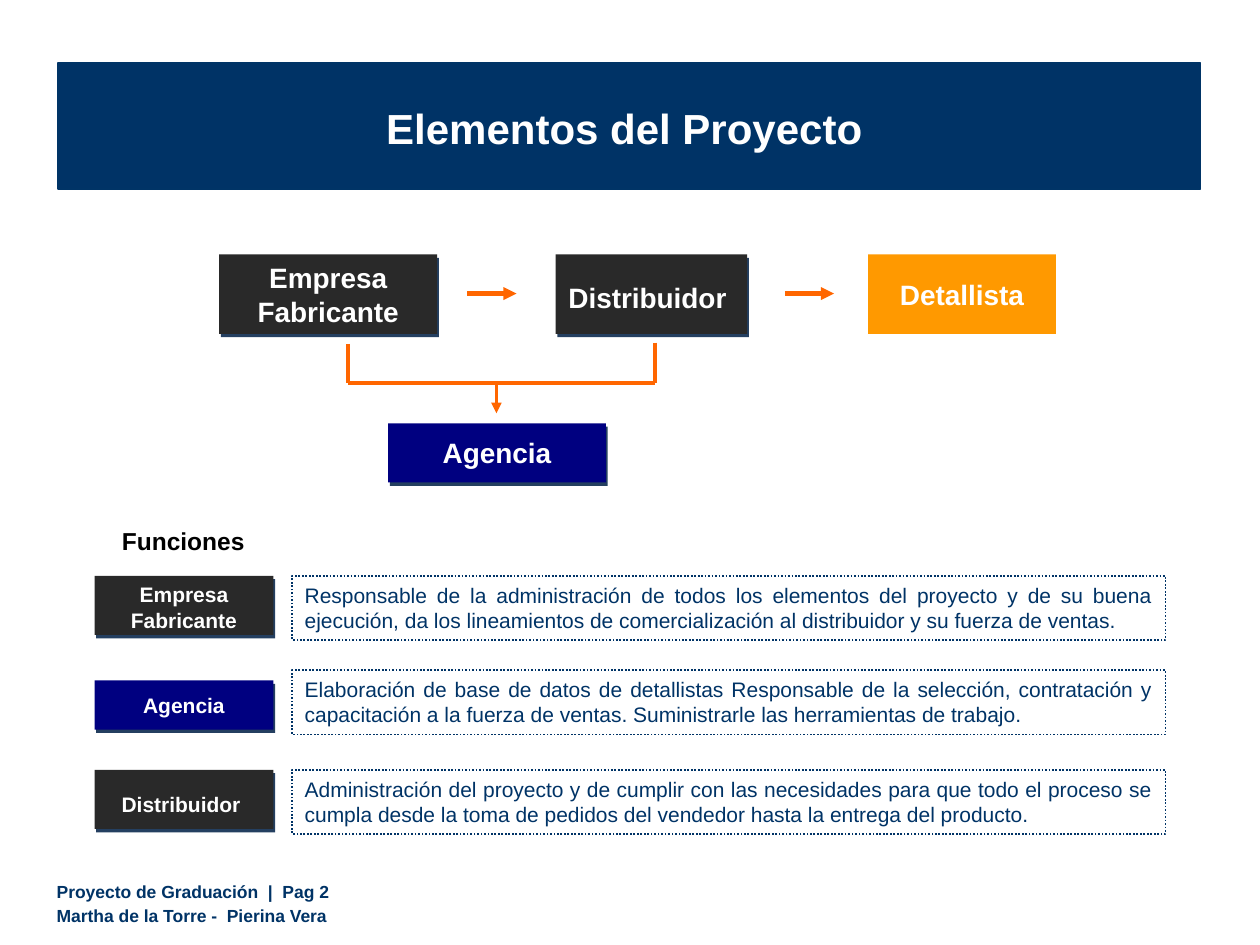
from dataclasses import dataclass

from lxml import etree
from pptx import Presentation, util as u
from pptx.dml.color import RGBColor
from pptx.enum import dml, shapes, text
from pptx.oxml import ns

In, Pt = u.Inches, u.Pt
Al, Mid = text.PP_ALIGN, text.MSO_ANCHOR


@dataclass(frozen=True)
class Theme:
    font: str = "Arial"
    navy: str = "003366"
    edge: str = "003466"
    dark: str = "292929"
    blue: str = "000080"
    gold: str = "FF9900"
    flame: str = "FF6600"
    shade: str = "243F60"
    white: str = "FFFFFF"
    black: str = "000000"
    title: int = 24
    node: int = 16
    head: int = 14
    body: int = 12
    foot: int = 10


T = Theme()
rgb = RGBColor.from_string


def write(frame, lines, size, color, align=Al.CENTER, bold=True, gap=0):
    for i, words in enumerate(lines):
        para = frame.paragraphs[0] if i == 0 else frame.add_paragraph()
        para.alignment = align
        para.space_before = Pt(gap)
        run = para.add_run()
        run.text = words
        run.font.name, run.font.size, run.font.bold = T.font, Pt(size), bold
        run.font.color.rgb = rgb(color)


def box(at, fill=None, cast=False, top=0.05, anchor=Mid.TOP):
    """Add a rectangle without outline; cast gives it a hard offset shadow."""
    shape = slide.shapes.add_shape(shapes.MSO_SHAPE.RECTANGLE, *map(In, at))
    if fill:
        shape.fill.solid()
        shape.fill.fore_color.rgb = rgb(fill)
    else:
        shape.fill.background()
    shape.line.fill.background()
    shape.shadow.inherit = False
    if cast:
        fx = shape.element.spPr.find(ns.qn("a:effectLst"))
        drop = etree.SubElement(fx, ns.qn("a:outerShdw"), dist=str(Pt(2.2)),
                                dir=str(63 * 60000), algn="ctr", rotWithShape="0")
        etree.SubElement(drop, ns.qn("a:srgbClr"), val=T.shade)
    frame = shape.text_frame
    frame.word_wrap = True
    frame.margin_top = In(top)
    frame.vertical_anchor = anchor
    return shape


deck = Presentation()
deck.slide_width, deck.slide_height = In(10), In(7.5)
slide = deck.slides.add_slide(deck.slide_layouts[5])

# Footer
foot = slide.shapes.add_textbox(In(0.45), In(6.99), In(6.07), In(0.36)).text_frame
foot.word_wrap = True
foot.margin_left = foot.margin_right = foot.margin_top = foot.margin_bottom = 0
write(foot, ["Proyecto de Graduación  |  Pag 2", "Martha de la Torre -  Pierina Vera"],
      T.foot, T.navy, Al.LEFT, gap=2)

# Title on its band
band = box((0.46, 0.5, 9.07, 1), T.navy)
band.line.color.rgb = rgb(T.edge)
band.line.width = Pt(0.75)
title = slide.shapes.title
title.left, title.top, title.width, title.height = map(In, (0.47, 0.76, 8.97, 0.5))
title.text_frame.auto_size = text.MSO_AUTO_SIZE.NONE
title.text_frame.vertical_anchor = Mid.BOTTOM
write(title.text_frame, ["Elementos del Proyecto"], T.title, T.white)
band.element.addnext(title.element)

# Flow diagram
nodes = [
    ("Empresa Fabricante", (1.74, 2.02, 1.73, 0.63), T.dark, True, 0.05, Mid.TOP),
    ("Distribuidor ", (4.41, 2.02, 1.52, 0.63), T.dark, True, 0.21, Mid.TOP),
    ("Agencia", (3.08, 3.36, 1.73, 0.47), T.blue, True, 0.1, Mid.TOP),
    ("Detallista", (6.89, 2.02, 1.49, 0.63), T.gold, False, 0.05, Mid.MIDDLE),
]
for name, *look in nodes:
    write(box(*look).text_frame, [name], T.node, T.white)

links = [
    ((3.71, 2.33, 4.1, 2.33), 2.5, True),
    ((6.23, 2.33, 6.62, 2.33), 2.5, True),
    ((2.76, 2.73, 2.76, 3.04), 2, False),
    ((5.2, 2.72, 5.2, 3.04), 2, False),
    ((2.76, 3.04, 5.2, 3.04), 2, False),
    ((3.94, 3.04, 3.94, 3.28), 2, True),
]
for ends, width, arrow in links:
    link = slide.shapes.add_connector(shapes.MSO_CONNECTOR.STRAIGHT, *map(In, ends))
    link.line.color.rgb = rgb(T.flame)
    link.line.width = Pt(width)
    if arrow:
        etree.SubElement(link.line._get_or_add_ln(), ns.qn("a:tailEnd"), type="triangle")
    etree.SubElement(link.element.spPr, ns.qn("a:effectLst"))

# Roles
head = box((0.51, 4.06, 1.89, 0.47), T.white, anchor=Mid.MIDDLE)
write(head.text_frame, ["Funciones"], T.head, T.black)

roles = [
    ("Empresa Fabricante", T.dark, 4.57, 0.47, 0.05, 4.57,
     "Responsable de la administración de todos los elementos del proyecto y de su buena "
     "ejecución, da los lineamientos de comercialización al distribuidor y su fuerza de ventas. "),
    ("Agencia", T.blue, 5.4, 0.39, 0.1, 5.32,
     "Elaboración de base de datos de detallistas Responsable de la selección, contratación y "
     "capacitación a la fuerza de ventas. Suministrarle las herramientas de trabajo. "),
    ("Distribuidor ", T.dark, 6.11, 0.47, 0.17, 6.11,
     "Administración del proyecto y de cumplir con las necesidades para que todo el proceso se "
     "cumpla desde la toma de pedidos del vendedor hasta la entrega del producto."),
]
for name, fill, y, high, inset, row, words in roles:
    tag = box((0.75, y, 1.42, high), fill, True, inset)
    write(tag.text_frame, [name], T.body, T.white)
    note = box((2.32, row, 6.93, 0.51))
    note.line.color.rgb = rgb(T.navy)
    note.line.width = Pt(1)
    note.line.dash_style = dml.MSO_LINE.ROUND_DOT
    write(note.text_frame, [words], T.body, T.navy, Al.JUSTIFY, False)

deck.save("out.pptx")
